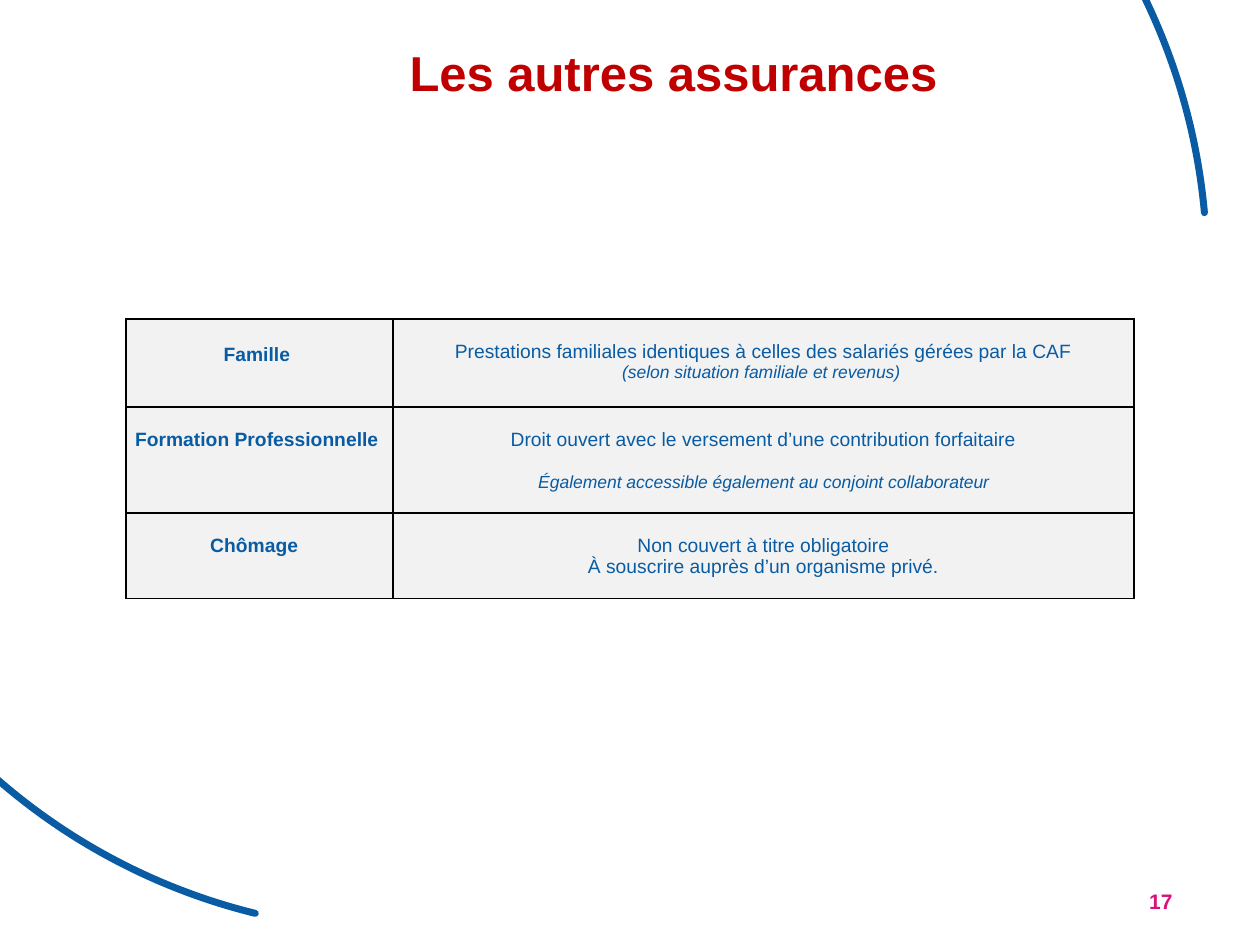
"""Build the slide on the other kinds of insurance."""
from dataclasses import dataclass

from lxml import etree
from pptx import Presentation
from pptx import util as u
from pptx.dml.color import RGBColor
from pptx.enum import shapes, text
from pptx.oxml.ns import qn

WIDTH, HEIGHT = u.Inches(10), u.Inches(7.5)
COLUMNS, ROWS = 100, 75
BLUE = RGBColor(0x09, 0x5B, 0xA3)
RED = RGBColor(0xC0, 0x00, 0x00)
PINK = RGBColor(0xD8, 0x11, 0x7D)
PALE = RGBColor(0xF2, 0xF2, 0xF2)
FONT = "Arial"
LINE_GAP = 12.65


@dataclass(frozen=True)
class Box:
    left: float
    top: float
    width: float
    height: float

    def lengths(self) -> tuple[int, int, int, int]:
        return (across(self.left), down(self.top), across(self.width), down(self.height))


@dataclass(frozen=True)
class Sweep:
    box: Box
    rotation: float


@dataclass(frozen=True)
class Line:
    words: str
    size: float = 11
    bold: bool = False
    italic: bool = False
    before: float = 0


@dataclass(frozen=True)
class Insurance:
    name: str
    cover: tuple[Line, ...]
    height: float
    name_drop: float = LINE_GAP


SWEEPS = (
    Sweep(Box(-2.9, -28, 98.7, 98.7), 354.8),
    Sweep(Box(-17, -24.1, 97.9, 98), 193.8),
)
INSURANCES = (
    Insurance("Famille ", (
        Line("Prestations familiales identiques à celles des salariés gérées par la CAF"),
        Line("(selon situation familiale et revenus) ", 10, italic=True),
    ), 7, name_drop=14.5),
    Insurance("Formation Professionnelle ", (
        Line("Droit ouvert avec le versement d’une contribution forfaitaire"),
        Line("Également accessible également au conjoint collaborateur", 10,
             italic=True, before=LINE_GAP),
    ), 8.4),
    Insurance("Chômage  ", (
        Line("Non couvert à titre obligatoire"),
        Line("À souscrire auprès d’un organisme privé."),
    ), 6.8),
)


def across(columns: float) -> int:
    return round(WIDTH * columns / COLUMNS)


def down(rows: float) -> int:
    return round(HEIGHT * rows / ROWS)


def write(paragraph, words: str, *, size: float, color: RGBColor = BLUE,
          bold: bool = False, italic: bool = False,
          align=text.PP_ALIGN.LEFT, before: float = 0, spacing: float = 1) -> None:
    paragraph.alignment = align
    paragraph.space_before = u.Pt(before)
    paragraph.line_spacing = spacing
    run = paragraph.add_run()
    run.text = words
    font = run.font
    font.name, font.size, font.bold, font.italic = FONT, u.Pt(size), bold, italic
    font.color.rgb = color


def frame_at(shape, box: Box, anchor):
    shape.left, shape.top, shape.width, shape.height = box.lengths()
    frame = shape.text_frame
    frame.margin_left = frame.margin_right = frame.margin_top = frame.margin_bottom = 0
    frame.word_wrap = True
    frame.auto_size = text.MSO_AUTO_SIZE.NONE
    frame.vertical_anchor = anchor
    return frame


def draw_sweep(slide, sweep: Sweep) -> None:
    arc = slide.shapes.add_shape(shapes.MSO_SHAPE.ARC, *sweep.box.lengths())
    arc.rotation = sweep.rotation
    arc.shadow.inherit = False
    arc.fill.background()
    arc.line.color.rgb = BLUE
    arc.line.width = u.Pt(4)
    arc.line._get_or_add_ln().set("cap", "rnd")


def add_borders(cell) -> None:
    properties = cell._tc.get_or_add_tcPr()
    for position, side in enumerate(("lnL", "lnR", "lnT", "lnB")):
        border = etree.Element(qn(f"a:{side}"), w=str(u.Pt(1)))
        fill = etree.SubElement(border, qn("a:solidFill"))
        etree.SubElement(fill, qn("a:srgbClr"), val="000000")
        properties.insert(position, border)


def fill_cell(cell, lines: tuple[Line, ...], drop: float) -> None:
    cell.fill.solid()
    cell.fill.fore_color.rgb = PALE
    cell.margin_left = cell.margin_right = across(0.7)
    cell.margin_top, cell.margin_bottom = u.Pt(drop), 0
    add_borders(cell)
    for index, line in enumerate(lines):
        frame = cell.text_frame
        paragraph = frame.add_paragraph() if index else frame.paragraphs[0]
        write(paragraph, line.words, size=line.size, bold=line.bold, italic=line.italic,
              before=line.before, align=text.PP_ALIGN.CENTER)


def draw_insurances(slide) -> None:
    box = Box(10, 25.3, 80, sum(insurance.height for insurance in INSURANCES))
    table = slide.shapes.add_table(len(INSURANCES), 2, *box.lengths()).table
    table.first_row = table.horz_banding = False
    for column, width in zip(table.columns, (21.2, 58.8)):
        column.width = across(width)
    for index, insurance in enumerate(INSURANCES):
        table.rows[index].height = down(insurance.height)
        name = (Line(insurance.name, bold=True),)
        fill_cell(table.cell(index, 0), name, insurance.name_drop)
        fill_cell(table.cell(index, 1), insurance.cover, LINE_GAP)


def main() -> None:
    deck = Presentation()
    deck.slide_width, deck.slide_height = WIDTH, HEIGHT
    slide = deck.slides.add_slide(deck.slide_layouts[5])
    for sweep in SWEEPS:
        draw_sweep(slide, sweep)
    heading = frame_at(slide.shapes.title, Box(32.5, 3.9, 60.7, 6), text.MSO_ANCHOR.TOP)
    write(heading.paragraphs[0], "Les autres assurances", size=28, color=RED,
          bold=True, spacing=0.9)
    number_box = Box(91.2, 69.5, 3.9, 4)
    number = frame_at(slide.shapes.add_textbox(*number_box.lengths()), number_box,
                      text.MSO_ANCHOR.MIDDLE)
    write(number.paragraphs[0], "17", size=12, color=PINK, bold=True)
    draw_insurances(slide)
    deck.save("out.pptx")


if __name__ == "__main__":
    main()
